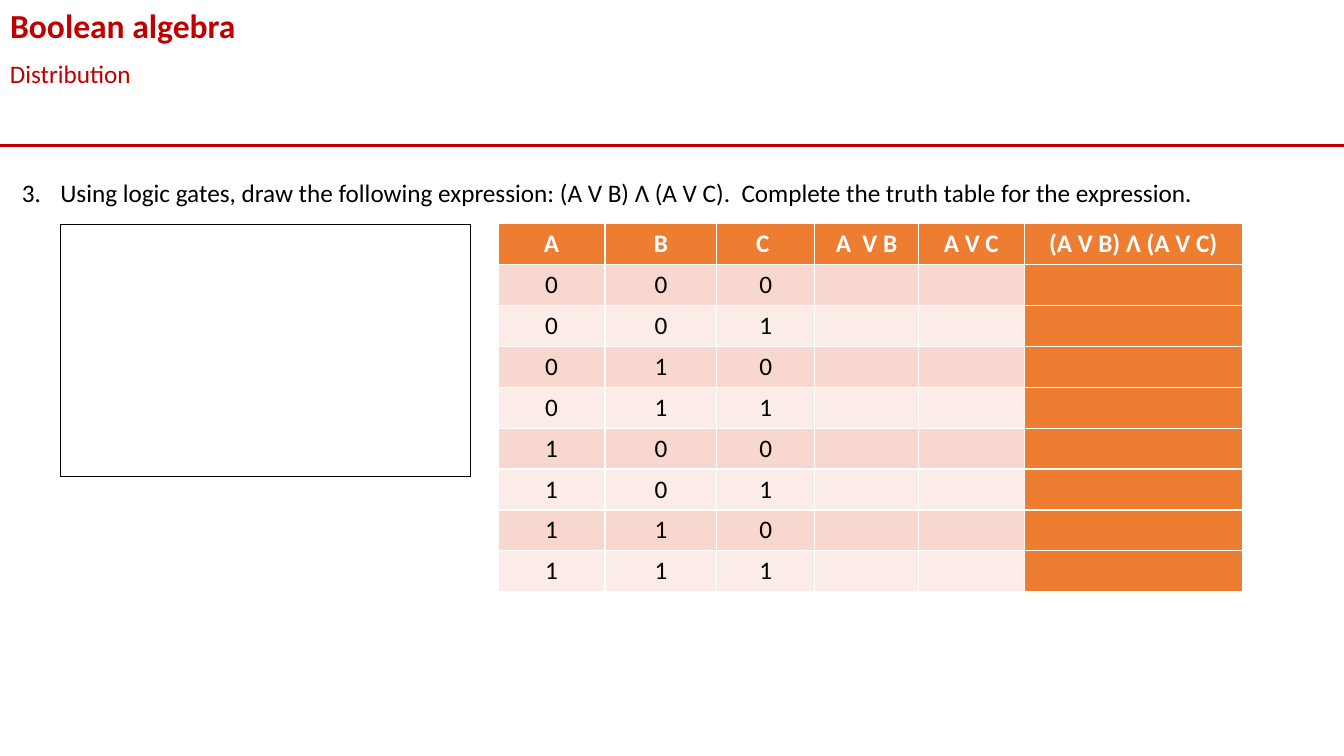
"""Build the Boolean algebra slide on distribution with its blank truth table."""
from dataclasses import dataclass
from itertools import product

from lxml import etree
from pptx import Presentation
from pptx import util as u
from pptx.dml.color import RGBColor
from pptx.enum import shapes, text
from pptx.oxml import ns

PX = 9144


@dataclass(frozen=True)
class Theme:
    font: str = "Calibri"
    title_size: int = 24
    body_size: int = 18
    red: str = "C00000"
    black: str = "000000"
    white: str = "FFFFFF"
    orange: str = "ED7D31"
    bands: tuple = ("F8D7CE", "FCECE8")


theme = Theme()


def place(shape, left, top, width, height):
    shape.left, shape.top = left * PX, top * PX
    shape.width, shape.height = width * PX, height * PX


def write(frame, words, color, size=theme.body_size, bold=False, align=text.PP_ALIGN.LEFT):
    frame.text = words
    frame.word_wrap = True
    paragraph = frame.paragraphs[0]
    paragraph.alignment = align
    for font in [paragraph.font] + [run.font for run in paragraph.runs]:
        font.name, font.size, font.bold = theme.font, u.Pt(size), bold
        font.color.rgb = RGBColor.from_string(color)


presentation = Presentation()
presentation.slide_width, presentation.slide_height = 1333 * PX, 750 * PX
slide = presentation.slides.add_slide(presentation.slide_layouts[5])

title = slide.shapes.title
place(title, 0, 0, 1333, 50)
write(title.text_frame, "Boolean algebra", theme.red, theme.title_size, True)
title.text_frame.vertical_anchor = text.MSO_ANCHOR.TOP
title.text_frame.auto_size = text.MSO_AUTO_SIZE.SHAPE_TO_FIT_TEXT

rule = slide.shapes.add_connector(shapes.MSO_CONNECTOR.STRAIGHT, 0, 144 * PX, 1333 * PX, 144 * PX)
rule.line.color.rgb = RGBColor.from_string(theme.red)
rule.line.width = u.Pt(2.25)
etree.SubElement(rule._element.spPr, ns.qn("a:effectLst"))

subtitle = slide.shapes.add_textbox(0, 53 * PX, 1333 * PX, 40 * PX)
write(subtitle.text_frame, "Distribution", theme.red)

question = slide.shapes.add_textbox(12 * PX, 171 * PX, 1307 * PX, 40 * PX)
question_frame = question.text_frame
write(
    question_frame,
    "Using logic gates, draw the following expression: (A V B) Ʌ (A V C).  "
    "Complete the truth table for the expression.",
    theme.black,
)
properties = question_frame.paragraphs[0]._p.get_or_add_pPr()
properties.set("marL", str(38 * PX))
properties.set("indent", str(-38 * PX))
numbering = etree.Element(ns.qn("a:buAutoNum"), type="arabicPeriod", startAt="3")
properties.insert(0, numbering)

headers = ["A", "B", "C ", "A  V B", "A V C", "(A V B) Ʌ (A V C)"]
column_widths = [106, 111, 97, 103, 105, 216]
inputs = [list(bits) + [""] * 3 for bits in product("01", repeat=3)]
rows = [headers] + inputs
table = slide.shapes.add_table(
    len(rows), len(headers), 494 * PX, 222 * PX, sum(column_widths) * PX, 365 * PX
).table
for column, width in zip(table.columns, column_widths):
    column.width = width * PX
for row_index, row in enumerate(rows):
    is_header = row_index == 0
    for column_index, words in enumerate(row):
        cell = table.cell(row_index, column_index)
        is_result = column_index == len(headers) - 1
        fill = theme.orange if is_header or is_result else theme.bands[(row_index - 1) % 2]
        cell.fill.solid()
        cell.fill.fore_color.rgb = RGBColor.from_string(fill)
        color = theme.white if is_header else theme.black
        write(cell.text_frame, words, color, bold=is_header, align=text.PP_ALIGN.CENTER)

drawing_area = slide.shapes.add_shape(
    shapes.MSO_SHAPE.RECTANGLE, 60 * PX, 223 * PX, 407 * PX, 250 * PX
)
drawing_area.shadow.inherit = False
drawing_area.fill.background()
drawing_area.line.color.rgb = RGBColor.from_string(theme.black)
drawing_area.line.width = u.Pt(1)

presentation.save("out.pptx")
